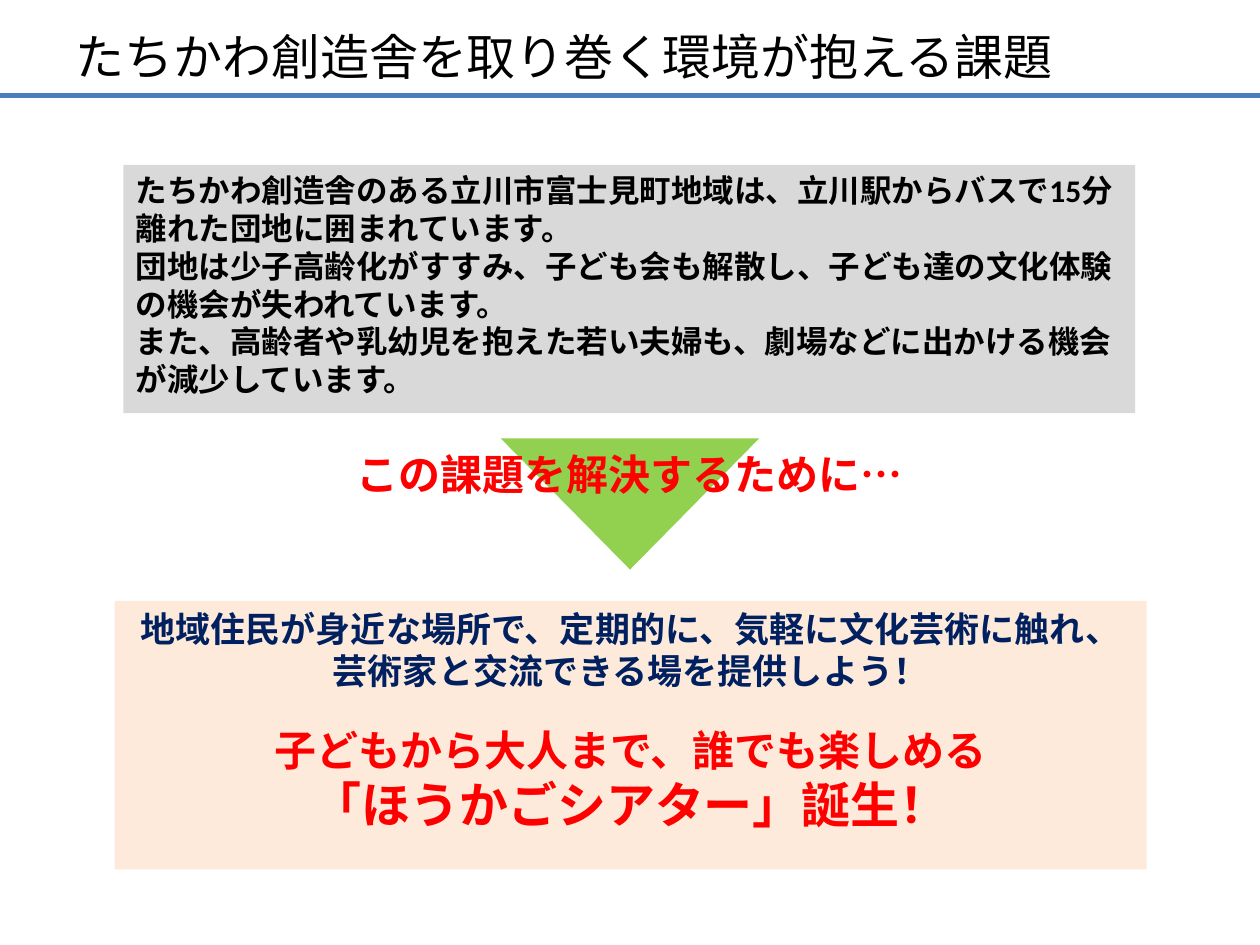
import pptx
import pptx.util
import pptx.dml.color
import pptx.enum.shapes
import pptx.enum.text
import pptx.oxml
import pptx.oxml.ns
from pptx.util import Inches

FONT = "Calibri"
ALIGN = pptx.enum.text.PP_ALIGN
ANCHOR = pptx.enum.text.MSO_ANCHOR
SHAPES = pptx.enum.shapes.MSO_SHAPE


def color(hex_string):
    return pptx.dml.color.RGBColor.from_string(hex_string)


def write(frame, lines, align=ALIGN.LEFT, bold=True, anchor=ANCHOR.TOP):
    """Fill a text frame from (text, size, colour, space before) lines."""
    frame.word_wrap = True
    frame.vertical_anchor = anchor
    for index, (text, size, ink, space) in enumerate(lines):
        paragraph = frame.add_paragraph() if index else frame.paragraphs[0]
        paragraph.alignment = align
        if space:
            paragraph.space_before = pptx.util.Pt(space)
        run = paragraph.add_run()
        run.text = text
        run.font.name = FONT
        run.font.size = pptx.util.Pt(size)
        run.font.bold = bold
        run.font.color.rgb = color(ink)


def add_filled(slide, kind, box, fill):
    shape = slide.shapes.add_shape(kind, *box)
    shape.shadow.inherit = False
    shape.fill.solid()
    shape.fill.fore_color.rgb = color(fill)
    shape.line.fill.background()
    return shape


def add_header(slide, left, top, width, height):
    rule_y = Inches(0.76)
    rule = slide.shapes.add_connector(
        pptx.enum.shapes.MSO_CONNECTOR.STRAIGHT, 0, rule_y, Inches(10), rule_y)
    rule.line.color.rgb = color("4B7EBC")
    rule.line.width = pptx.util.Pt(3)
    properties = rule._element.spPr
    properties.append(pptx.oxml.parse_xml(
        f"<a:effectLst {pptx.oxml.ns.nsdecls('a')}/>"))

    title = slide.shapes.title
    title.left, title.top, title.width, title.height = left, top, width, height
    write(title.text_frame,
          [("たちかわ創造舎を取り巻く環境が抱える課題", 28, "000000", 0)],
          bold=False, anchor=ANCHOR.MIDDLE)


def add_issues(slide, *box):
    panel = add_filled(slide, SHAPES.RECTANGLE, box, "D9D9D9")
    issues = [
        "たちかわ創造舎のある立川市富士見町地域は、立川駅からバスで15分離れた団地に囲まれています。",
        "団地は少子高齢化がすすみ、子ども会も解散し、子ども達の文化体験の機会が失われています。",
        "また、高齢者や乳幼児を抱えた若い夫婦も、劇場などに出かける機会が減少しています。",
    ]
    write(panel.text_frame, [(issue, 18, "000000", 0) for issue in issues])


def add_transition(slide, left, top, width, height):
    """Downward triangle centred in the box, with the caption across it."""
    arrow_width = Inches(2.05)
    arrow_left = left + (width - arrow_width) // 2
    arrow = add_filled(slide, SHAPES.ISOSCELES_TRIANGLE,
                       (arrow_left, top, arrow_width, height), "92D050")
    arrow.rotation = 180
    caption = slide.shapes.add_textbox(
        left, top + Inches(0.03), width, Inches(0.5))
    write(caption.text_frame,
          [("この課題を解決するために…", 24, "FF0000", 0)], ALIGN.CENTER)


def add_solution(slide, *box):
    panel = add_filled(slide, SHAPES.RECTANGLE, box, "FDEADA")
    write(panel.text_frame, [
        ("地域住民が身近な場所で、定期的に、気軽に文化芸術に触れ、", 20, "002060", 0),
        ("芸術家と交流できる場を提供しよう！", 20, "002060", 0),
        ("子どもから大人まで、誰でも楽しめる", 24, "FF0000", 19),
        ("「ほうかごシアター」誕生！", 28, "FF0000", 0),
    ], ALIGN.CENTER)


def main():
    deck = pptx.Presentation()
    deck.slide_width, deck.slide_height = Inches(10), Inches(7.5)
    slide = deck.slides.add_slide(deck.slide_layouts.get_by_name("Title Only"))
    add_header(slide, Inches(0.5), Inches(0.21), Inches(9), Inches(0.46))
    add_solution(slide, Inches(0.91), Inches(4.77), Inches(8.19), Inches(2.13))
    add_issues(slide, Inches(0.98), Inches(1.31), Inches(8.03), Inches(1.97))
    add_transition(slide, Inches(2.56), Inches(3.48), Inches(4.88), Inches(1.04))
    deck.save("out.pptx")


if __name__ == "__main__":
    main()
